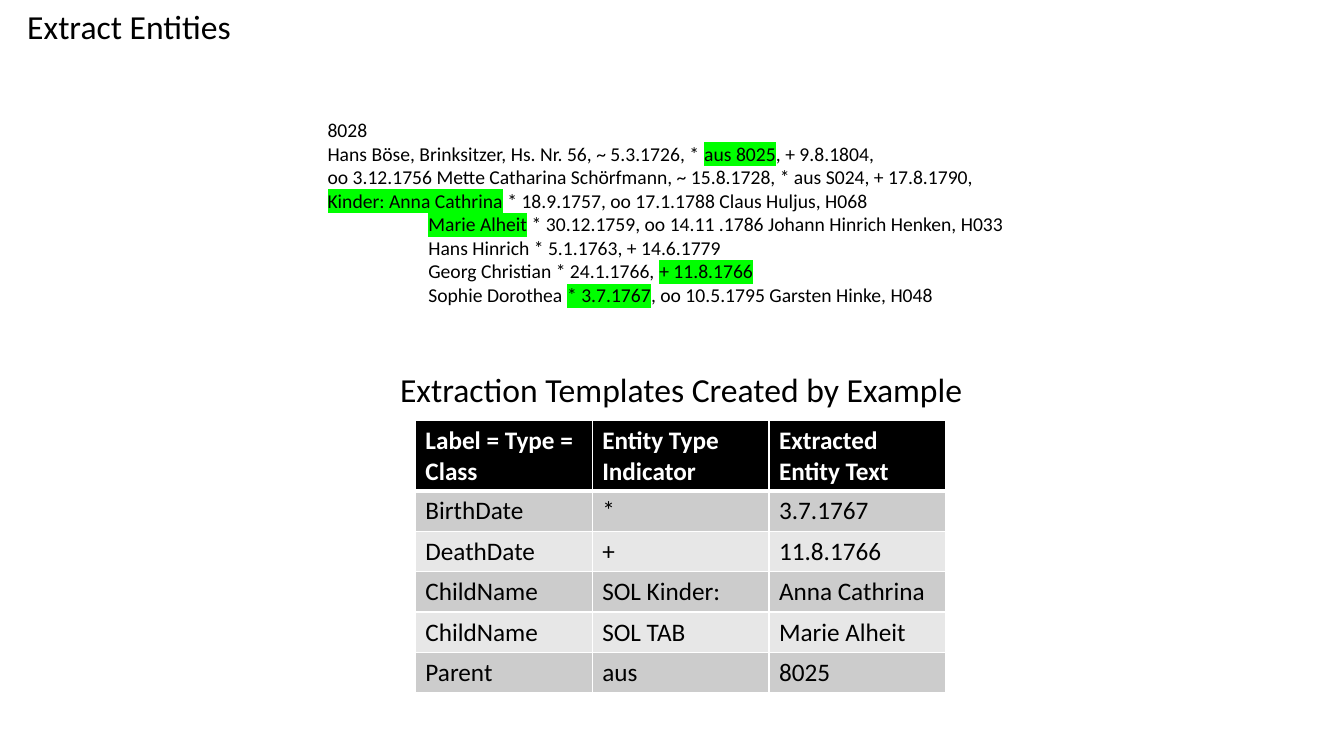
from lxml import etree
from pptx import Presentation
from pptx.dml.color import RGBColor
from pptx.enum.text import MSO_ANCHOR, MSO_AUTO_SIZE, PP_ALIGN
from pptx.oxml.ns import qn
from pptx.util import Emu, Pt

PX = 9144  # EMU per px, 100 px to the inch
FONT = "Calibri"
LEFT = PP_ALIGN.LEFT
TOP = MSO_ANCHOR.TOP
GROW = MSO_AUTO_SIZE.SHAPE_TO_FIT_TEXT
TITLE_ONLY = 5
COLORS = {"text": "000000", "header": "000000", "header_text": "FFFFFF",
          "border": "FFFFFF", "odd": "CCCCCC", "even": "E7E7E7",
          "marker": "00FF00"}

# Text between bars is highlighted.
FAMILY_RECORD = [
    "8028",
    "Hans Böse, Brinksitzer, Hs. Nr. 56, ~ 5.3.1726, * |aus 8025|, + 9.8.1804,",
    "oo 3.12.1756 Mette Catharina Schörfmann, ~ 15.8.1728, * aus S024, + 17.8.1790,",
    "|Kinder: Anna Cathrina| * 18.9.1757, oo 17.1.1788 Claus Huljus, H068",
    "|\tMarie Alheit| * 30.12.1759, oo 14.11 .1786 Johann Hinrich Henken, H033",
    "\tHans Hinrich * 5.1.1763, + 14.6.1779",
    "\tGeorg Christian * 24.1.1766, |+ 11.8.1766|",
    "\tSophie Dorothea |* 3.7.1767|, oo 10.5.1795 Garsten Hinke, H048",
]
TEMPLATES = [
    ["Label = Type = Class", "Entity Type Indicator", "Extracted Entity Text"],
    ["BirthDate", "*", "3.7.1767"],
    ["DeathDate", "+", "11.8.1766"],
    ["ChildName", "SOL Kinder:", "Anna Cathrina"],
    ["ChildName", "SOL TAB", "Marie Alheit"],
    ["Parent", "aus", "8025"],
]


def px(*lengths):
    return [Emu(n * PX) for n in lengths]


class SlideBuilder:
    def __init__(self, slide):
        self.slide = slide

    def style(self, r, size, color="text", bold=False):
        r.font.name = FONT
        r.font.size = Pt(size)
        r.font.bold = bold
        r.font.color.rgb = RGBColor.from_string(COLORS[color])

    def highlight(self, r):
        fill = r.font._element.find(qn("a:solidFill"))
        mark = etree.Element(qn("a:highlight"))
        etree.SubElement(mark, qn("a:srgbClr"), val=COLORS["marker"])
        fill.addnext(mark)

    def fill_text(self, sp, lines, size, wrap):
        tf = sp.text_frame
        tf.word_wrap = wrap
        tf.auto_size = GROW
        tf.vertical_anchor = TOP
        for i, line in enumerate(lines):
            p = tf.add_paragraph() if i else tf.paragraphs[0]
            p.alignment = LEFT
            p.line_spacing = 1.0
            p.space_before = Pt(0)
            p._p.get_or_add_pPr().set("defTabSz", str(100 * PX))
            for j, part in enumerate(line.split("|")):
                if not part:
                    continue
                r = p.add_run()
                r.text = part
                self.style(r, size)
                if j % 2:
                    self.highlight(r)

    def title(self, text, box, size):
        sp = self.slide.shapes.title
        sp.left, sp.top, sp.width, sp.height = px(*box)
        self.fill_text(sp, [text], size, False)

    def text(self, lines, box, size, wrap=False):
        sp = self.slide.shapes.add_textbox(*px(*box))
        self.fill_text(sp, lines, size, wrap)

    def borders(self, cell, top, bottom):
        tc_pr = cell._tc.get_or_add_tcPr()
        for side, width in (("L", 1), ("R", 1), ("T", top), ("B", bottom)):
            ln = etree.SubElement(tc_pr, qn("a:ln" + side), w=str(Pt(width)))
            fill = etree.SubElement(ln, qn("a:solidFill"))
            etree.SubElement(fill, qn("a:srgbClr"), val=COLORS["border"])

    def table(self, rows, box, header_height, row_height, size):
        frame = self.slide.shapes.add_table(len(rows), len(rows[0]), *px(*box))
        table = frame.table
        for i, row in enumerate(rows):
            table.rows[i].height, = px(row_height if i else header_height)
            fill = ("odd" if i % 2 else "even") if i else "header"
            for j, text in enumerate(row):
                cell = table.cell(i, j)
                cell.text = text
                self.borders(cell, 3 if i == 1 else 1, 1 if i else 3)
                cell.fill.solid()
                cell.fill.fore_color.rgb = RGBColor.from_string(COLORS[fill])
                r = cell.text_frame.paragraphs[0].runs[0]
                self.style(r, size, "text" if i else "header_text", i == 0)


def main():
    prs = Presentation()
    prs.slide_width, prs.slide_height = px(1333, 750)
    s = SlideBuilder(prs.slides.add_slide(prs.slide_layouts[TITLE_ONLY]))
    s.title("Extract Entities", (17, 1, 224, 50), 24)
    s.text(FAMILY_RECORD, (315, 112, 708, 199), 14, wrap=True)
    s.text(["Extraction Templates Created by Example"], (387, 361, 583, 50), 24)
    s.table(TEMPLATES, (412, 417, 526, 270), 70, 40, 18)
    prs.save("out.pptx")


if __name__ == "__main__":
    main()
